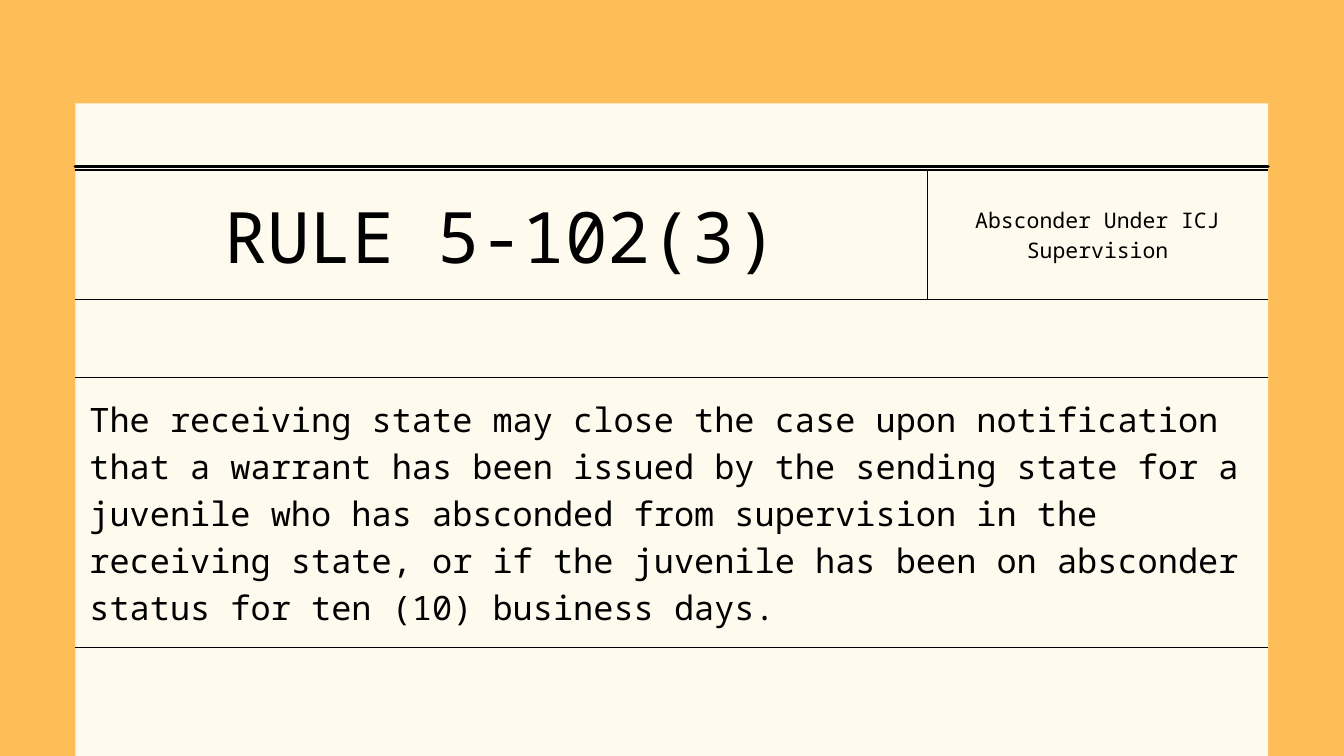
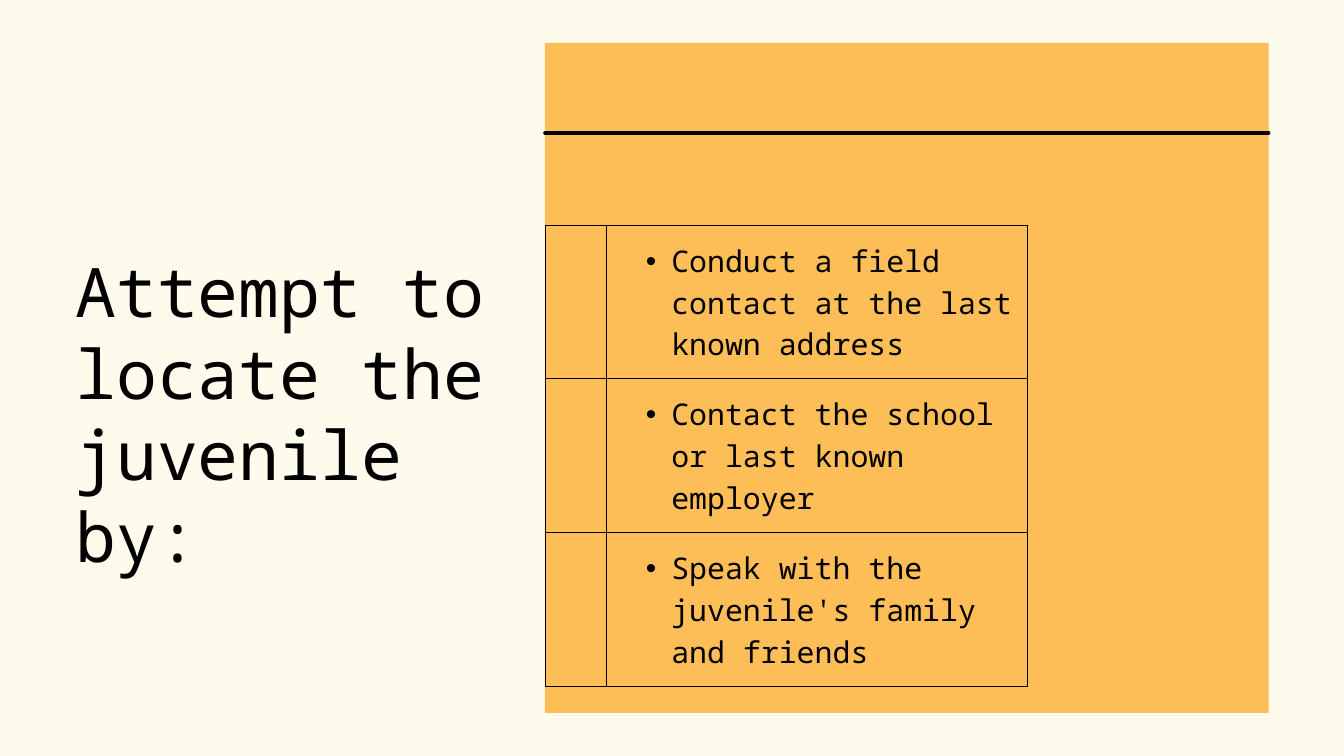
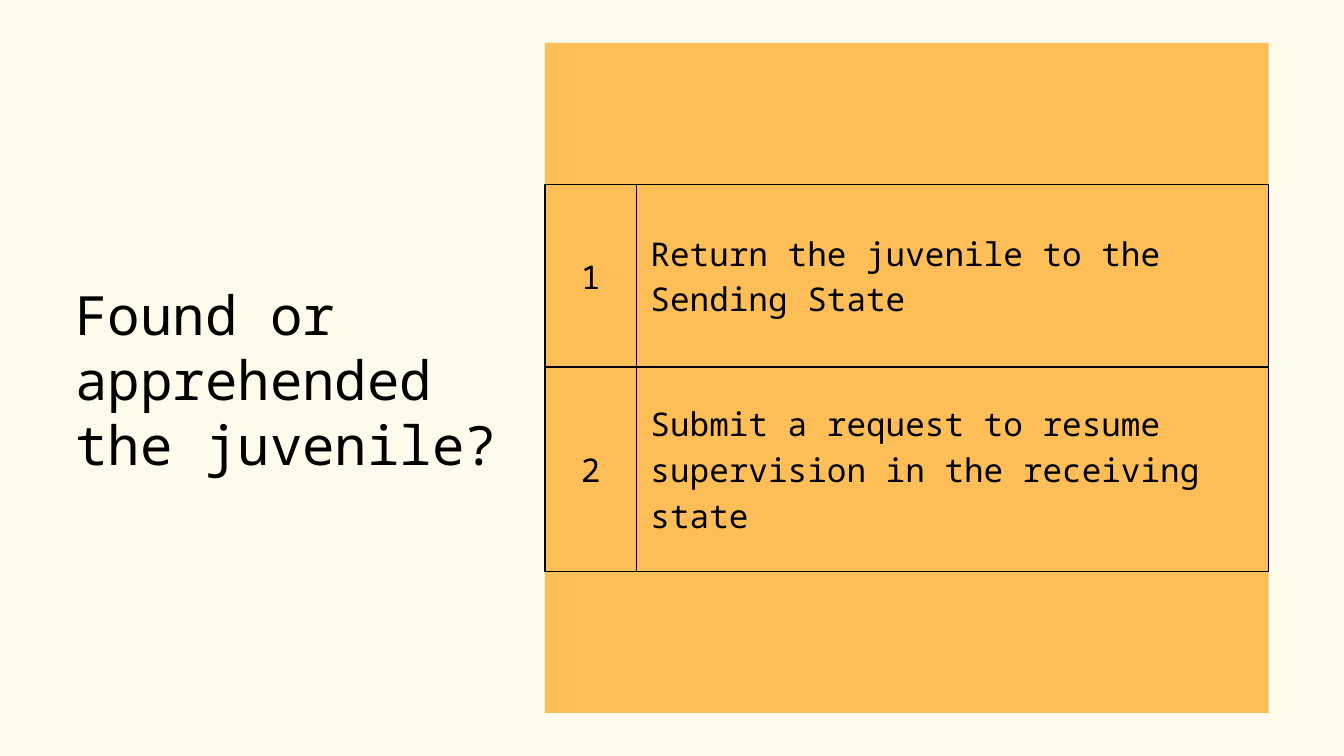
from dataclasses import dataclass

from pptx import Presentation
from pptx.dml.color import RGBColor as RGB
from pptx.enum.shapes import MSO_CONNECTOR as CONN, MSO_SHAPE as SHAPE
from pptx.enum.text import MSO_ANCHOR as ANCHOR, MSO_AUTO_SIZE as AUTOSIZE, PP_ALIGN as ALIGN
from pptx.oxml import parse_xml
from pptx.oxml.ns import nsdecls, qn
from pptx.oxml.xmlchemy import OxmlElement
from pptx.util import Inches, Pt


@dataclass(frozen=True)
class Theme:
    font: str = "Noto Sans Mono"
    ink: RGB = RGB.from_string("000000")
    amber: RGB = RGB.from_string("FDBE58")
    card: RGB = RGB.from_string("FFFAEE")
    cream: RGB = RGB.from_string("FFFBEC")
    rule_title: int = 76
    rule_topic: int = 23
    rule_body: int = 36
    bullet: int = 32
    step: int = 35
    title_leading: float = 1.2
    cell_leading: float = 1.4
    heavy_line: float = 3.75
    cell_inset: float = 0.21


T = Theme()
NO_STYLE = "{2D5ABB26-0587-4C30-8999-92F81FD0307C}"
CARD = (1.12, 1.54, 17.75, 9.71)
PANEL = (8.11, 0.64, 10.77, 9.97)


def set_all(obj, values):
    for name, value in values.items():
        setattr(obj, name, value)


def write(p, text, size, leading, align=ALIGN.LEFT):
    set_all(p, {"alignment": align, "line_spacing": Pt(round(size * leading, 1))})
    r = p.add_run()
    r.text = text
    set_all(r.font, {"name": T.font, "size": Pt(size), "bold": False})
    r.font.color.rgb = T.ink


def add_bullet(p):
    pPr = p._p.get_or_add_pPr()
    for name, value in {"marL": Inches(0.76), "indent": Inches(-0.38), "lvl": 1}.items():
        pPr.set(name, str(value))
    pPr.append(parse_xml(f'<a:buFont {nsdecls("a")} typeface="Arial"/>'))
    pPr.append(parse_xml(f'<a:buChar {nsdecls("a")} char="•"/>'))


def add_slide(prs, background, layout):
    s = prs.slides.add_slide(prs.slide_layouts.get_by_name(layout))
    s.background.fill.solid()
    s.background.fill.fore_color.rgb = background
    return s


def add_panel(s, box, color):
    sp = s.shapes.add_shape(SHAPE.RECTANGLE, *map(Inches, box))
    sp.shadow.inherit = False
    sp.fill.solid()
    sp.fill.fore_color.rgb = color
    sp.line.fill.background()


def add_heavy_rule(s, box, drop):
    x, y, w, _ = box
    line = s.shapes.add_connector(
        CONN.STRAIGHT, *map(Inches, (x, y + drop, x + w, y + drop)))
    line.line.color.rgb = T.ink
    line.line.width = Pt(T.heavy_line)
    line.line._get_or_add_ln().set("cap", "rnd")
    line._element.spPr.append(OxmlElement("a:effectLst"))


def set_borders(cell, width, hidden):
    tcPr = cell._tc.get_or_add_tcPr()
    for i, side in enumerate("LRTB"):
        paint = "<a:noFill/>" if side in hidden else (
            f'<a:solidFill><a:srgbClr val="{T.ink}"/></a:solidFill>')
        tcPr.insert(i, parse_xml(
            f'<a:ln{side} {nsdecls("a")} w="{Pt(width)}">{paint}</a:ln{side}>'))


def add_grid(s, left, top, cols, rows, border=1.5, open_sides=False):
    gf = s.shapes.add_table(
        len(rows), len(cols), *map(Inches, (left, top, sum(cols), sum(rows))))
    table = gf.table
    set_all(table, {"first_row": False, "horz_banding": False})
    table._tbl.tblPr.find(qn("a:tableStyleId")).text = NO_STYLE
    for col, width in zip(table.columns, cols):
        col.width = Inches(width)
    for row, height in zip(table.rows, rows):
        row.height = Inches(height)
        for i, cell in enumerate(row.cells):
            inset = Inches(T.cell_inset)
            set_all(cell, {"vertical_anchor": ANCHOR.MIDDLE,
                           "margin_left": inset, "margin_right": inset,
                           "margin_top": inset, "margin_bottom": inset})
            cell.fill.background()
            hidden = ("L" if i == 0 else "") + ("R" if i == len(cols) - 1 else "")
            set_borders(cell, border, hidden if open_sides else "")
    return table


def fill_cell(cell, text, size, align=ALIGN.LEFT):
    p = cell.text_frame.paragraphs[0]
    write(p, text, size, T.cell_leading, align)
    return p


def add_title(s, text, size, box):
    sp = s.shapes.title
    set_all(sp, dict(zip(("left", "top", "width", "height"), map(Inches, box))))
    tf = sp.text_frame
    set_all(tf, {"word_wrap": True, "auto_size": AUTOSIZE.SHAPE_TO_FIT_TEXT,
                 "vertical_anchor": ANCHOR.TOP, "margin_left": 0, "margin_right": 0,
                 "margin_top": 0, "margin_bottom": 0})
    write(tf.paragraphs[0], text, size, T.title_leading)


def rule_slide(prs, number, topic, body):
    s = add_slide(prs, T.amber, "Blank")
    x, y, w, _ = CARD
    add_panel(s, CARD, T.card)
    add_heavy_rule(s, CARD, 0.94)
    topic_width = 5.07
    header = add_grid(s, x, y + 0.99, [w - topic_width, topic_width], [1.93],
                      open_sides=True)
    fill_cell(header.cell(0, 0), number, T.rule_title, ALIGN.CENTER)
    fill_cell(header.cell(0, 1), topic, T.rule_topic, ALIGN.CENTER)
    text = add_grid(s, x, y + 4.08, [w], [4.02], open_sides=True)
    fill_cell(text.cell(0, 0), body, T.rule_body)


def panel_slide(prs, title, size, title_top, title_height):
    s = add_slide(prs, T.cream, "Title Only")
    add_panel(s, PANEL, T.amber)
    add_title(s, title, size, (1.12, title_top, 6.39, title_height))
    return s


def bullet_table(s, box, items):
    x, y, _, _ = box
    add_heavy_rule(s, box, 1.34)
    table = add_grid(s, x, y + 2.71, [0.91, 6.27], [1.25, 1.3, 1.16], border=1)
    for i, item in enumerate(items):
        add_bullet(fill_cell(table.cell(i, 1), item, T.bullet))


def step_table(s, box, steps):
    x, y, w, _ = box
    number_width = 1.36
    table = add_grid(s, x, y + 2.11, [number_width, w - number_width], [2.71, 3.05])
    for i, step in enumerate(steps):
        fill_cell(table.cell(i, 0), str(i + 1), T.step, ALIGN.CENTER)
        fill_cell(table.cell(i, 1), step, T.step)


def main():
    prs = Presentation()
    set_all(prs, {"slide_width": Inches(20), "slide_height": Inches(11.25)})
    rule_slide(
        prs, "RULE 5-102(3)", "Absconder Under ICJ Supervision",
        "The receiving state may close the case upon notification that a warrant has "
        "been issued by the sending state for a juvenile who has absconded from "
        "supervision in the receiving state, or if the juvenile has been on absconder "
        "status for ten (10) business days.")
    s = panel_slide(prs, "Attempt to locate the juvenile by:", 73, 3.71, 4.83)
    bullet_table(s, PANEL, [
        "Conduct a field contact at the last known address",
        "Contact the school or last known employer",
        "Speak with the juvenile's family and friends"])
    s = panel_slide(prs, "Found or apprehended the juvenile?", 58, 4.19, 2.88)
    step_table(s, PANEL, [
        "Return the juvenile to the Sending State",
        "Submit a request to resume supervision in the receiving state"])
    prs.save("out.pptx")


if __name__ == "__main__":
    main()
